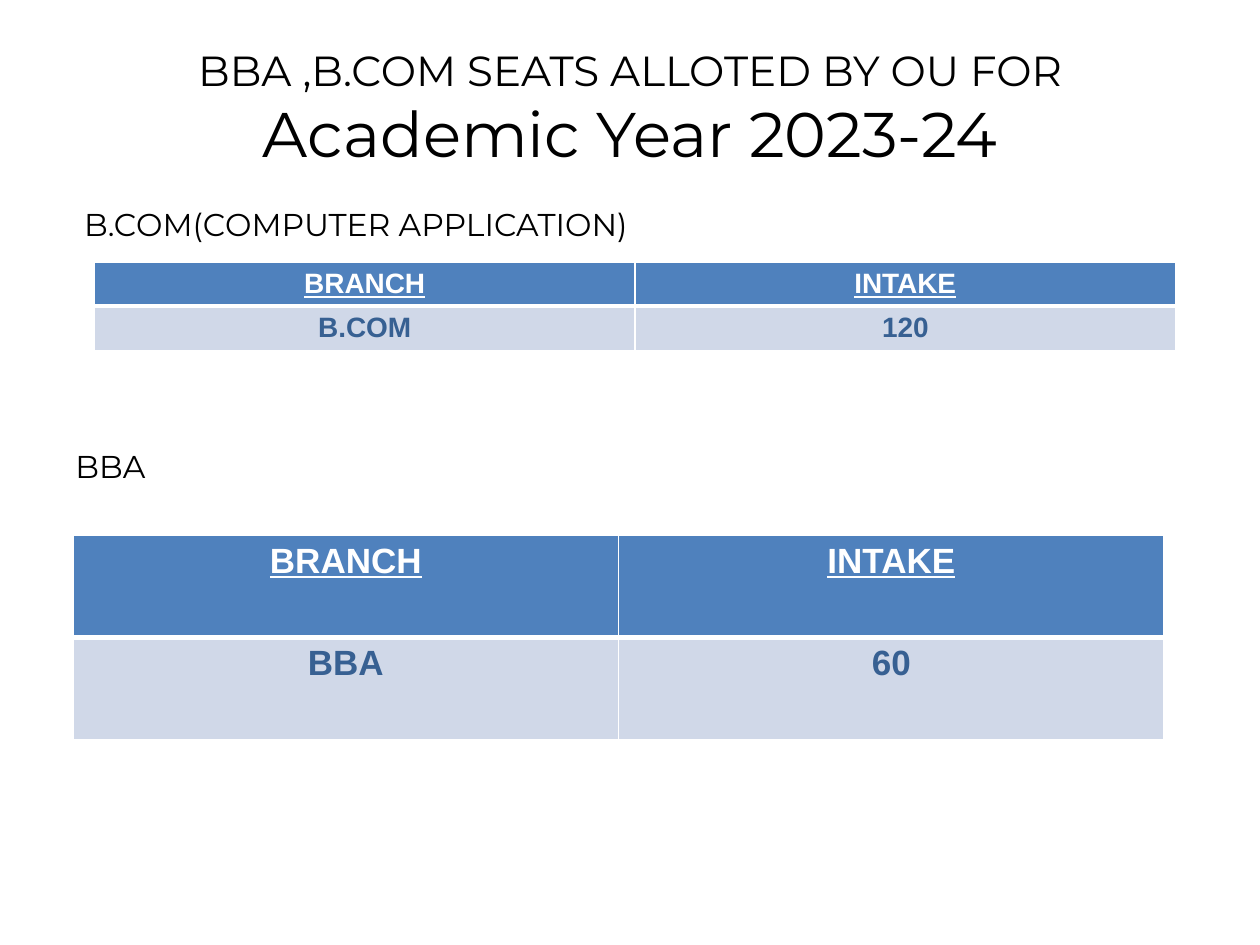
import pptx
import pptx.util
import pptx.oxml
import pptx.dml.color
import pptx.enum.text
from pptx.util import Inches

HEX = {"black": "000000", "white": "FFFFFF", "head": "4F81BD",
       "body": "D0D8E8", "navy": "376092"}
CENTER = pptx.enum.text.PP_ALIGN.CENTER
TOP = pptx.enum.text.MSO_ANCHOR.TOP
NS = "http://schemas.openxmlformats.org/drawingml/2006/main"


def style(font, face, size, color):
    font.name = face
    font.size = pptx.util.Pt(size)
    font.color.rgb = pptx.dml.color.RGBColor.from_string(HEX[color])


def edge(cell, side, width):
    cell._tc.get_or_add_tcPr().append(pptx.oxml.parse_xml(
        f'<a:ln{side} xmlns:a="{NS}" w="{pptx.util.Pt(width)}"><a:solidFill>'
        f'<a:srgbClr val="{HEX["white"]}"/></a:solidFill></a:ln{side}>'))


deck = pptx.Presentation()
deck.slide_width, deck.slide_height = Inches(10), Inches(7.5)
slide = deck.slides.add_slide(deck.slide_layouts[5])

# Title
title = slide.shapes.title
title.left, title.top = Inches(0.5), Inches(0.3)
title.width, title.height = Inches(9), Inches(0.87)
frame = title.text_frame
frame.text = "BBA ,B.COM SEATS ALLOTED BY OU FOR\vAcademic Year 2023-24"
frame.auto_size = pptx.enum.text.MSO_AUTO_SIZE.NONE
frame.vertical_anchor = TOP
para = frame.paragraphs[0]
para.alignment = CENTER
for run, size in zip(para.runs, (24, 36)):
    style(run.font, "Montserrat", size, "black")

# Seat tables: left, top, column width, row height, text size, branch, intake
seats = [
    (0.75, 2.08, 4.29, 0.35, 16, "B.COM", "120"),
    (0.58, 4.25, 4.33, 0.81, 20, "BBA", "60"),
]
for left, top, wide, high, size, branch, intake in seats:
    table = slide.shapes.add_table(2, 2, Inches(left), Inches(top),
                                   Inches(2 * wide), Inches(2 * high)).table
    for col in table.columns:
        col.width = Inches(wide)
    rows = [("BRANCH", "INTAKE"), (branch, intake)]
    for r, texts in enumerate(rows):
        head = r == 0
        for c, text in enumerate(texts):
            cell = table.cell(r, c)
            # A thick rule parts the header from the body
            for side in "LRTB":
                edge(cell, side, 3 if side == ("B" if head else "T") else 1)
            cell.fill.solid()
            cell.fill.fore_color.rgb = pptx.dml.color.RGBColor.from_string(
                HEX["head" if head else "body"])
            cell.text_frame.text = text
            para = cell.text_frame.paragraphs[0]
            para.alignment = CENTER
            font = para.runs[0].font
            style(font, "Arial", size, "white" if head else "navy")
            font.bold = True
            font.underline = head

# Table labels
labels = [
    (0.57, 1.58, 4.93, "B.COM(COMPUTER APPLICATION)"),
    (0.5, 3.5, 0.79, "BBA"),
]
for left, top, wide, text in labels:
    box = slide.shapes.add_textbox(Inches(left), Inches(top),
                                   Inches(wide), Inches(0.4))
    box.text_frame.text = text
    box.text_frame.word_wrap = False
    style(box.text_frame.paragraphs[0].runs[0].font, "Montserrat", 18, "black")

deck.save("out.pptx")
